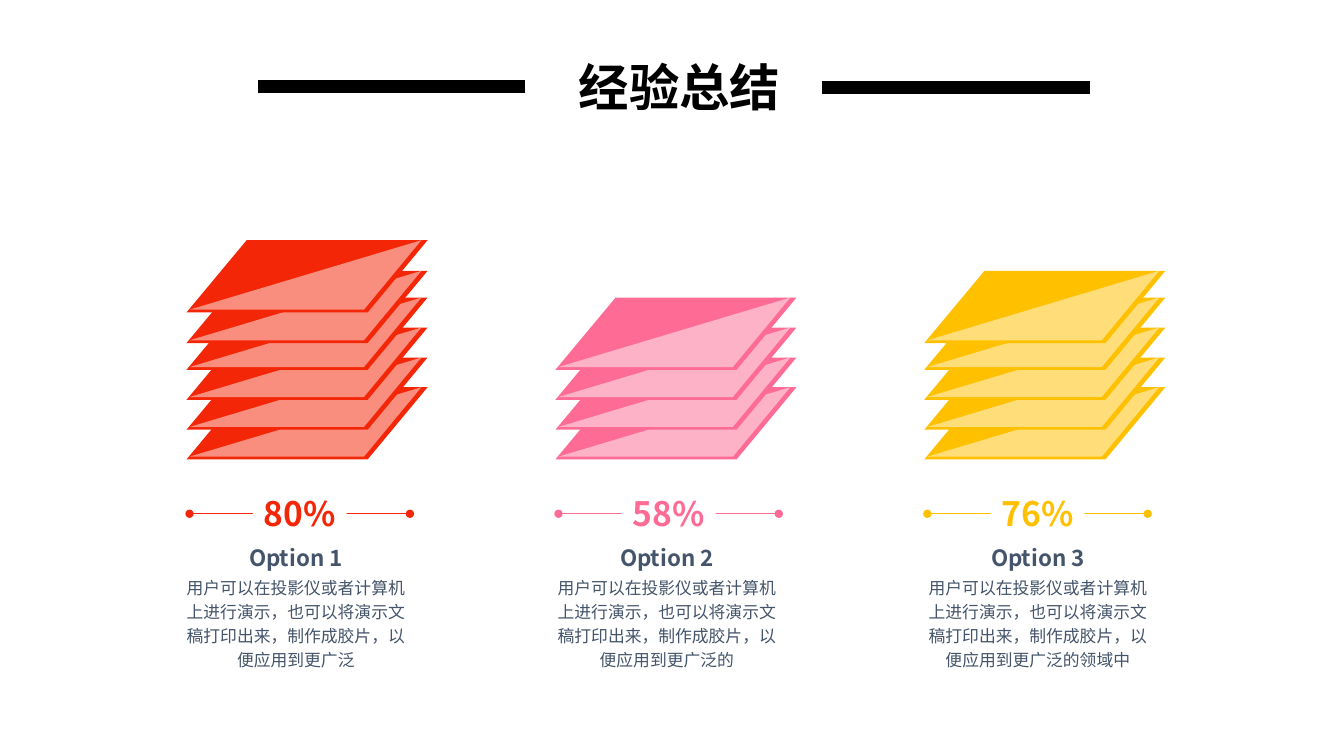
from dataclasses import dataclass
from typing import Any

from lxml import etree
from pptx import Presentation
from pptx import util as u
from pptx.dml.color import RGBColor
from pptx.enum import shapes, text
from pptx.oxml.ns import qn


# Colours, font and type sizes
@dataclass(frozen=True)
class Theme:
    font: str = "Noto Sans CJK SC"
    black: str = "000000"
    white: str = "FFFFFF"
    slate: str = "44546A"
    gloss: int = 48
    title: float = 36
    share: float = 24
    label: float = 16
    body: float = 12


@dataclass(frozen=True)
class Option:
    label: str
    share: str
    color: str
    sheets: int
    ending: str


@dataclass(frozen=True)
class Box:
    left: float
    top: float
    width: float
    height: float

    def emu(self) -> list[int]:
        return [u.Pt(v) for v in (self.left, self.top, self.width, self.height)]


THEME = Theme()
BODY = "用户可以在投影仪或者计算机上进行演示，也可以将演示文稿打印出来，制作成胶片，以便应用到更广泛"
OPTIONS = [
    Option("Option 1", "80%", "F42608", 6, ""),
    Option("Option 2", "58%", "FE6C96", 4, "的"),
    Option("Option 3", "76%", "FFC000", 5, "的领域中"),
]

# Layout in points; sheets are stacked from the bottom up
LEFT, PITCH = 133.2, 263.5
NOTE_X, NOTE_STEP = 121.7, 265
TOPS = [276.6, 255.4, 234, 212.6, 193.5, 171.6]
SHEET = [(129.4, 51.6), (0, 51.6), (43, 0), (172.2, 0)]
SHINE = [(167.8, 0), (2.2, 49.6), (126.8, 49.6)]
RULE_Y, RULE_W = 367, 157.4
BARS = [(184.3, 375.1, 61.9), (587.5, 778.3, 62.6)]


def rgb(code: str) -> RGBColor:
    return RGBColor.from_string(code)


def apply(item: Any, fmt: dict[str, Any]) -> None:
    for name, value in fmt.items():
        setattr(item, name, value)


def write(shape: Any, words: str, size: float, color: str, bold: bool = True,
          wrap: bool = False, align: Any = text.PP_ALIGN.CENTER,
          anchor: Any = text.MSO_ANCHOR.TOP, space: float = 1.0) -> None:
    frame = shape.text_frame
    apply(frame, {"word_wrap": wrap, "vertical_anchor": anchor,
                  "auto_size": text.MSO_AUTO_SIZE.SHAPE_TO_FIT_TEXT,
                  "margin_left": u.Pt(7.2), "margin_right": u.Pt(7.2),
                  "margin_top": u.Pt(3.6), "margin_bottom": u.Pt(3.6)})
    para = frame.paragraphs[0]
    apply(para, {"alignment": align, "line_spacing": space})
    run = para.add_run()
    run.text = words
    apply(run.font, {"name": THEME.font, "size": u.Pt(size), "bold": bold})
    run.font.color.rgb = rgb(color)
    # East Asian typeface
    etree.SubElement(run._r.get_or_add_rPr(), qn("a:ea"), typeface=THEME.font)


def paint(shape: Any, color: str, alpha: int = 100) -> None:
    shape.shadow.inherit = False
    shape.fill.solid()
    shape.fill.fore_color.rgb = rgb(color)
    shape.line.fill.background()
    if alpha < 100:
        tint = shape._element.spPr.find(qn("a:solidFill"))[0]
        etree.SubElement(tint, qn("a:alpha"), val=str(alpha * 1000))


def rule(slide: Any, start: float, end: float, y: float, color: str,
         width: float, dots: bool = False) -> None:
    line = slide.shapes.add_connector(
        shapes.MSO_CONNECTOR.STRAIGHT, u.Pt(start), u.Pt(y), u.Pt(end), u.Pt(y))
    line.line.color.rgb = rgb(color)
    line.line.width = u.Pt(width)
    props = line._element.spPr
    if dots:
        for tag in ("a:headEnd", "a:tailEnd"):
            etree.SubElement(props.find(qn("a:ln")), qn(tag), type="oval")
    etree.SubElement(props, qn("a:effectLst"))


def outline(slide: Any, points: list[tuple[float, float]], x: float, y: float,
            color: str, alpha: int = 100) -> None:
    spots = [(u.Pt(x + dx), u.Pt(y + dy)) for dx, dy in points]
    form = slide.shapes.build_freeform(*spots[0])
    form.add_line_segments(spots[1:], close=True)
    paint(form.convert_to_shape(), color, alpha)


def column(slide: Any, index: int, option: Option) -> None:
    x = LEFT + index * PITCH
    # Stack of sheets
    for y in TOPS[:option.sheets]:
        outline(slide, SHEET, x, y, option.color)
        outline(slide, SHINE, x, y, THEME.white, THEME.gloss)
    # Share on a dotted rule
    rule(slide, x + 2.2, x + 2.2 + RULE_W, RULE_Y, option.color, 0.5, True)
    plate = slide.shapes.add_shape(
        shapes.MSO_SHAPE.RECTANGLE, *Box(x + 47.5, 348.5, 67, 36).emu())
    paint(plate, THEME.white)
    write(plate, option.share, THEME.share, option.color,
          anchor=text.MSO_ANCHOR.MIDDLE)
    # Label and description
    x = NOTE_X + index * NOTE_STEP
    label = slide.shapes.add_textbox(*Box(x + 46.8, 385.2, 85.7, 26.6).emu())
    write(label, option.label, THEME.label, THEME.slate)
    note = slide.shapes.add_textbox(*Box(x, 406.1, 179.3, 75.6).emu())
    write(note, BODY + option.ending, THEME.body, THEME.slate,
          bold=False, wrap=True, space=1.2)


def main() -> None:
    deck = Presentation()
    apply(deck, {"slide_width": u.Pt(960), "slide_height": u.Pt(540)})
    slide = deck.slides.add_slide(deck.slide_layouts[5])
    # Title between two bars
    title = slide.shapes.title
    spot = Box(406.1, 36.7, 174.2, 51.1).emu()
    apply(title, dict(zip(("left", "top", "width", "height"), spot)))
    write(title, "经验总结", THEME.title, THEME.black, wrap=True,
          align=text.PP_ALIGN.LEFT)
    for start, end, y in BARS:
        rule(slide, start, end, y, THEME.black, 9.25)
    # Option columns
    for index, option in enumerate(OPTIONS):
        column(slide, index, option)
    deck.save("out.pptx")


if __name__ == "__main__":
    main()
